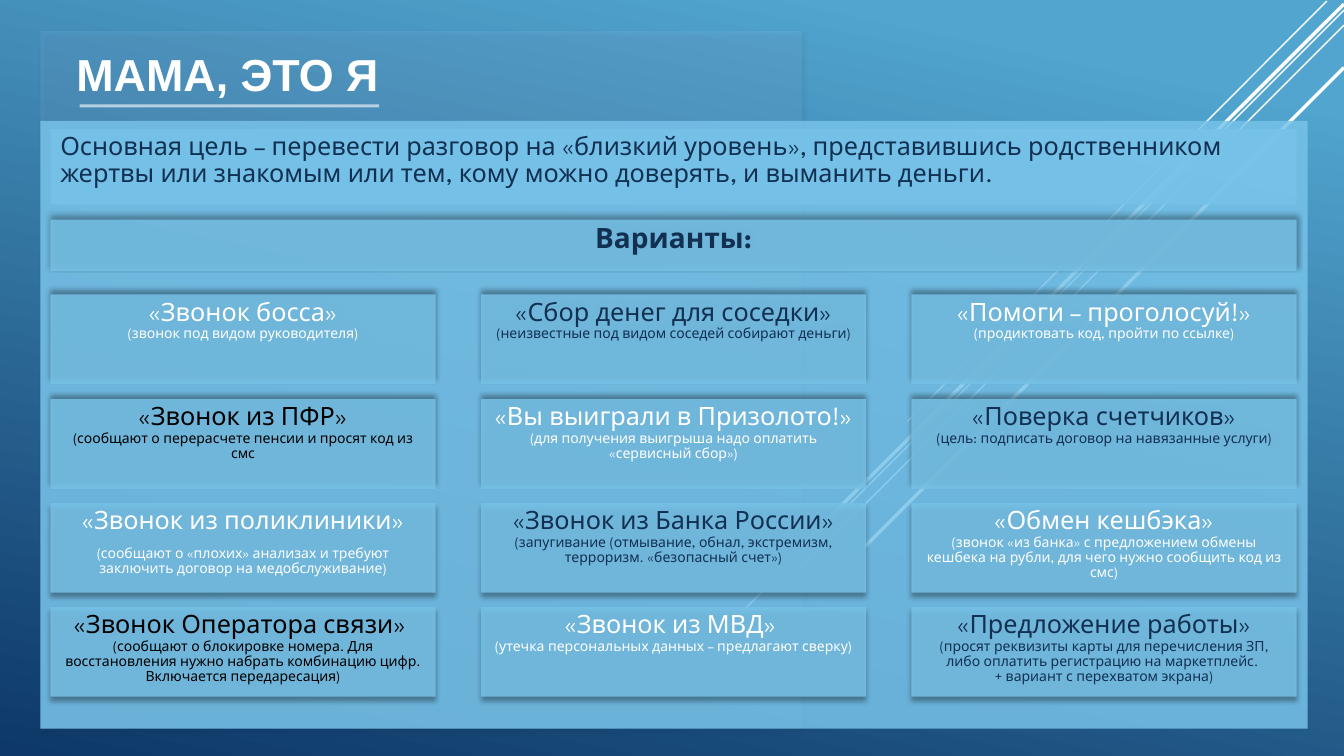
"""Build the slide about phone scams that pose as relatives or acquaintances."""
from dataclasses import dataclass

from lxml import etree
from pptx import Presentation
from pptx.dml.color import RGBColor
from pptx.enum.shapes import MSO_CONNECTOR, MSO_SHAPE
from pptx.enum.text import MSO_ANCHOR, PP_ALIGN
from pptx.oxml.ns import qn
from pptx.util import Inches, Pt

RECTANGLE = MSO_SHAPE.RECTANGLE
STRAIGHT = MSO_CONNECTOR.STRAIGHT
TOP, BOTTOM = MSO_ANCHOR.TOP, MSO_ANCHOR.BOTTOM
LEFT, CENTER = PP_ALIGN.LEFT, PP_ALIGN.CENTER


@dataclass(frozen=True)
class Theme:
    sky: str = "51A5CF"
    deep: str = "0D3868"
    haze: str = "99CCFF"
    panel: str = "77C2E8"
    white: str = "FFFFFF"
    navy: str = "113052"
    black: str = "000000"
    title_font: str = "Arial"
    body_font: str = "League Spartan"
    title_size: int = 32
    banner_size: int = 20
    heading_size: int = 18
    detail_size: int = 10


theme = Theme()

presentation = Presentation()
presentation.slide_width = Inches(13.33)
presentation.slide_height = Inches(7.5)
slide = presentation.slides.add_slide(presentation.slide_layouts[6])


def add_panel(box, color, opacity, shadow_angle=None):
    shape = slide.shapes.add_shape(RECTANGLE, *map(Inches, box))
    shape.shadow.inherit = False
    shape.line.fill.background()
    shape.fill.solid()
    shape.fill.fore_color.rgb = RGBColor.from_string(color)
    properties = shape.element.spPr
    fill_color = properties.find(qn("a:solidFill"))[0]
    etree.SubElement(fill_color, qn("a:alpha"), val=str(opacity * 1000))
    if shadow_angle is not None:
        shadow = etree.SubElement(
            properties.find(qn("a:effectLst")), qn("a:outerShdw"),
            blurRad=str(Pt(4)), dist=str(Pt(3)),
            dir=str(shadow_angle * 60000), algn="ctr", rotWithShape="0")
        shadow_color = etree.SubElement(shadow, qn("a:srgbClr"), val=theme.black)
        etree.SubElement(shadow_color, qn("a:alpha"), val="40000")
    return shape


def write_text(shape, lines, color, font=theme.body_font, bold=False,
               align=CENTER, anchor=TOP, spacing=0.9, spaced=False):
    frame = shape.text_frame
    frame.word_wrap = True
    frame.vertical_anchor = anchor
    for index, (text, size) in enumerate(lines):
        paragraph = frame.add_paragraph() if index else frame.paragraphs[0]
        layout = {"alignment": align, "line_spacing": spacing,
                  "space_before": Pt(0.2 * size if spaced else 0),
                  "space_after": Pt(6 if spaced else 0)}
        for name, value in layout.items():
            setattr(paragraph, name, value)
        run = paragraph.add_run()
        run.text = text
        for name, value in {"name": font, "size": Pt(size), "bold": bold}.items():
            setattr(run.font, name, value)
        run.font.color.rgb = RGBColor.from_string(color)


background = slide.background.fill
background.gradient()
background.gradient_angle = 258
for stop, position, color in zip(background.gradient_stops, (0.1, 1),
                                 (theme.sky, theme.deep)):
    stop.position = position
    stop.color.rgb = RGBColor.from_string(color)

haze_box = (0.4, 0.31, 7.55, 6.92)
lines = [
    (13.16, 0.01, 9, 4.18, 1, 100),
    (13.33, 0.1, 6.68, 6.75, 1, 100),
    (13.33, 0.25, 7.91, 5.67, 1, 100),
    (13.33, 0.04, 8.02, 5.34, 2.5, 100),
    (13.33, 0.67, 8.58, 5.42, 2.5, 100),
    (0.79, 1.05, 3.76, 1.05, 2.25, 60),
]
for *ends, width, opacity in lines:
    if opacity < 100:
        add_panel(haze_box, theme.haze, 15, 45)
    connector = slide.shapes.add_connector(STRAIGHT, *map(Inches, ends))
    connector.line.width = Pt(width)
    connector.line.color.rgb = RGBColor.from_string(theme.white)
    properties = connector.element.spPr
    line_color = properties.find(qn("a:ln")).find(qn("a:solidFill"))[0]
    etree.SubElement(line_color, qn("a:alpha"), val=str(opacity * 1000))
    etree.SubElement(properties, qn("a:effectLst"))

title = slide.shapes.add_textbox(*map(Inches, (0.66, 0.46, 6.8, 0.59)))
write_text(title, [("МАМА, ЭТО Я", theme.title_size)], theme.white,
           font=theme.title_font, bold=True, align=LEFT, anchor=BOTTOM, spacing=1.0)

add_panel((0.4, 1.2, 12.57, 6.03), theme.panel, 85)

goal = add_panel((0.5, 1.28, 12.36, 0.75), theme.panel, 85)
write_text(goal, [(
    "Основная цель – перевести разговор на «близкий уровень», представившись "
    "родственником жертвы или знакомым или тем, кому можно доверять, и выманить деньги.",
    theme.heading_size)], theme.navy, align=LEFT, spaced=True)

banner = add_panel((0.5, 2.18, 12.36, 0.51), theme.panel, 85, 270)
write_text(banner, [("Варианты:", theme.banner_size)], theme.navy, bold=True)

card_rows = [
    (2.92, 270, [
        (theme.white, "«Звонок босса»", ["(звонок под видом руководителя)"]),
        (theme.navy, "«Сбор денег для соседки»",
         ["(неизвестные под видом соседей собирают деньги)"]),
        (theme.white, "«Помоги – проголосуй!»", ["(продиктовать код, пройти по ссылке)"]),
    ]),
    (3.96, 270, [
        (theme.black, "«Звонок из ПФР»",
         ["(сообщают о перерасчете пенсии и просят код из смс"]),
        (theme.white, "«Вы выиграли в Призолото!»",
         ["(для получения выигрыша надо оплатить «сервисный сбор»)"]),
        (theme.navy, "«Поверка счетчиков»",
         ["(цель: подписать договор на навязанные услуги)"]),
    ]),
    (4.99, 90, [
        (theme.white, "«Звонок из поликлиники»",
         ["(сообщают о «плохих» анализах и требуют заключить договор на медобслуживание)"]),
        (theme.navy, "«Звонок из Банка России»",
         ["(запугивание (отмывание, обнал, экстремизм, терроризм. «безопасный счет»)"]),
        (theme.white, "«Обмен кешбэка»",
         ["(звонок «из банка» с предложением обмены кешбека на рубли, "
          "для чего нужно сообщить код из смс)"]),
    ]),
    (6.02, 90, [
        (theme.black, "«Звонок Оператора связи» ",
         ["(сообщают о блокировке номера. Для восстановления нужно набрать "
          "комбинацию цифр. Включается передаресация)"]),
        (theme.white, "«Звонок из МВД» ",
         ["(утечка персональных данных – предлагают сверку)"]),
        (theme.navy, "«Предложение работы»",
         ["(просят реквизиты карты для перечисления ЗП, либо оплатить "
          "регистрацию на маркетплейс. ", "+ вариант с перехватом экрана)"]),
    ]),
]
for top, shadow_angle, cards in card_rows:
    for column, (color, heading, details) in enumerate(cards):
        card = add_panel((0.5 + 4.27 * column, top, 3.82, 0.89),
                         theme.panel, 85, shadow_angle)
        card_lines = [(heading, theme.heading_size)]
        card_lines += [(detail, theme.detail_size) for detail in details]
        write_text(card, card_lines, color, spaced="поликлиники" in heading)

presentation.save("out.pptx")
